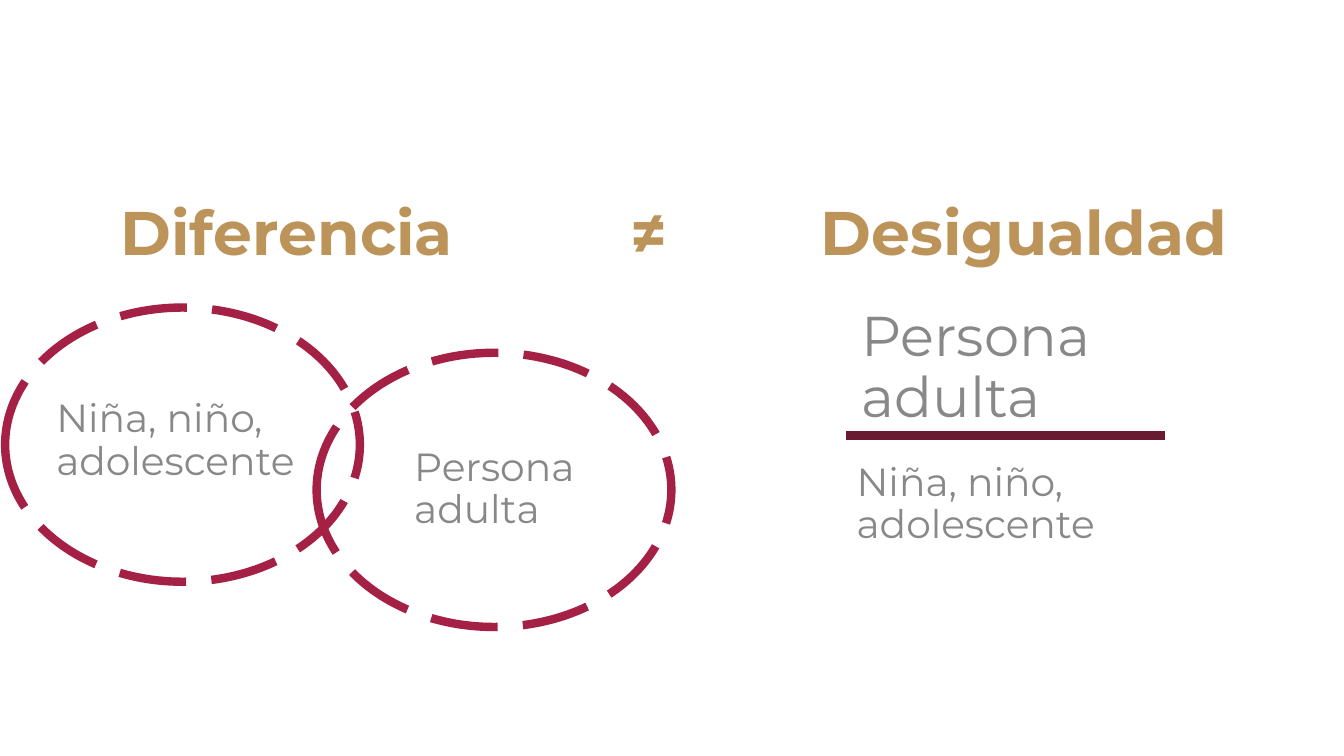
from dataclasses import dataclass

from lxml import etree
from pptx import Presentation
from pptx.dml.color import RGBColor
from pptx.enum.dml import MSO_LINE
from pptx.enum.shapes import MSO_CONNECTOR, MSO_SHAPE
from pptx.enum.text import MSO_ANCHOR, MSO_AUTO_SIZE
from pptx.oxml.ns import qn
from pptx.util import Cm, Pt

ELLIPSE = MSO_SHAPE.OVAL
STRAIGHT = MSO_CONNECTOR.STRAIGHT
LONG_DASH = MSO_LINE.LONG_DASH
BOTTOM = MSO_ANCHOR.BOTTOM
GROW = MSO_AUTO_SIZE.SHAPE_TO_FIT_TEXT


@dataclass(frozen=True)
class Theme:
    font: str = "Montserrat"
    gold: RGBColor = RGBColor(0xBC, 0x94, 0x5A)
    grey: RGBColor = RGBColor(0x88, 0x88, 0x88)
    crimson: RGBColor = RGBColor(0xA4, 0x21, 0x45)
    maroon: RGBColor = RGBColor(0x69, 0x1B, 0x31)
    title_size: Pt = Pt(44)
    large_size: Pt = Pt(40)
    label_size: Pt = Pt(28)
    stroke: Pt = Pt(6)


theme = Theme()
CHILD = "Niña, niño, adolescente"
ADULT = "Persona adulta"

prs = Presentation()
prs.slide_width, prs.slide_height = Cm(33.87), Cm(19.05)
slide = prs.slides.add_slide(prs.slide_layouts[6])


def add_text(text, left, top, width, height, size, color, tabs=()):
    """Add a one-paragraph text box; tabs holds (position in cm, alignment)."""
    box = slide.shapes.add_textbox(Cm(left), Cm(top), Cm(width), Cm(height))
    frame = box.text_frame
    frame.word_wrap = True
    frame.text = text
    paragraph = frame.paragraphs[0]
    paragraph.line_spacing = 0.9
    if tabs:
        properties = paragraph._p.get_or_add_pPr()
        tab_list = etree.SubElement(properties, qn("a:tabLst"))
        for position, alignment in tabs:
            etree.SubElement(tab_list, qn("a:tab"), pos=str(Cm(position)), algn=alignment)
    font = paragraph.runs[0].font
    font.name, font.size, font.color.rgb = theme.font, size, color
    return frame


# Heading: two concepts set apart by the inequality sign
heading = add_text("Diferencia\t≠\tDesigualdad", 2.79, 4.6, 30, 2.31,
                   theme.title_size, theme.gold, [(13.31, "ctr"), (17.65, "l")])
heading.vertical_anchor = BOTTOM
heading.paragraphs[0].runs[0].font.bold = True

# Difference: overlapping circles
for left, top in [(0.13, 7.75), (7.98, 8.89)]:
    circle = slide.shapes.add_shape(ELLIPSE, Cm(left), Cm(top), Cm(8.94), Cm(6.91))
    circle.shadow.inherit = False
    circle.fill.background()
    circle.line.color.rgb = theme.crimson
    circle.line.width = theme.stroke
    circle.line.dash_style = LONG_DASH

# Labels of the circles, then those above and below the bar
for text, left, top, width, height, size in [
    (CHILD, 1.17, 9.93, 7.09, 2.41, theme.label_size),
    (ADULT, 10.19, 11.15, 4.98, 2.41, theme.label_size),
    (ADULT, 21.46, 7.65, 7.59, 3.33, theme.large_size),
    (CHILD, 21.34, 11.53, 8.66, 2.41, theme.label_size),
]:
    label = add_text(text, left, top, width, height, size, theme.grey)
    label.auto_size = GROW

# Inequality: bar between the two levels
bar = slide.shapes.add_connector(STRAIGHT, Cm(21.31), Cm(10.97), Cm(29.36), Cm(10.97))
bar.line.color.rgb = theme.maroon
bar.line.width = theme.stroke
etree.SubElement(bar._element.spPr, qn("a:effectLst"))

prs.save("out.pptx")
